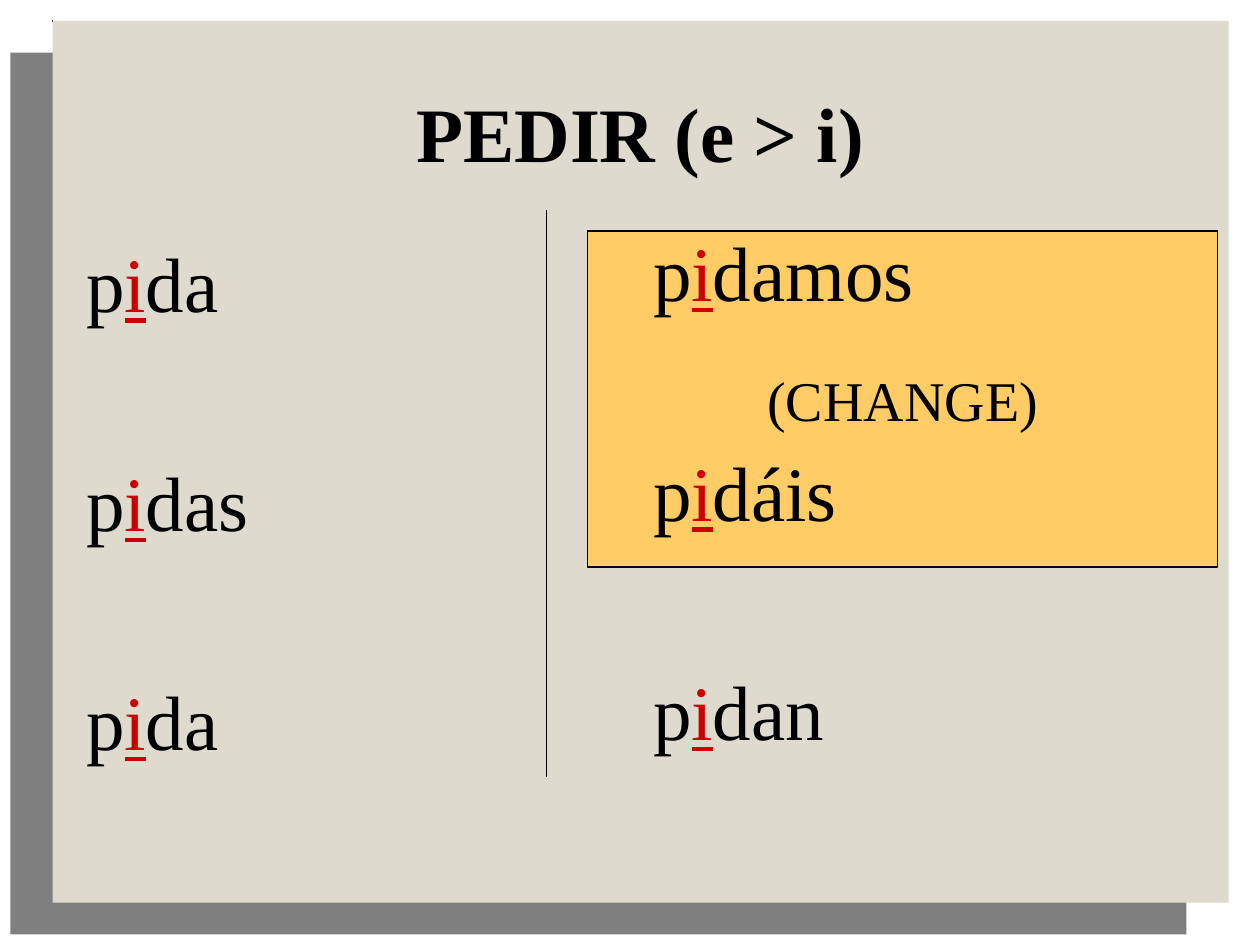
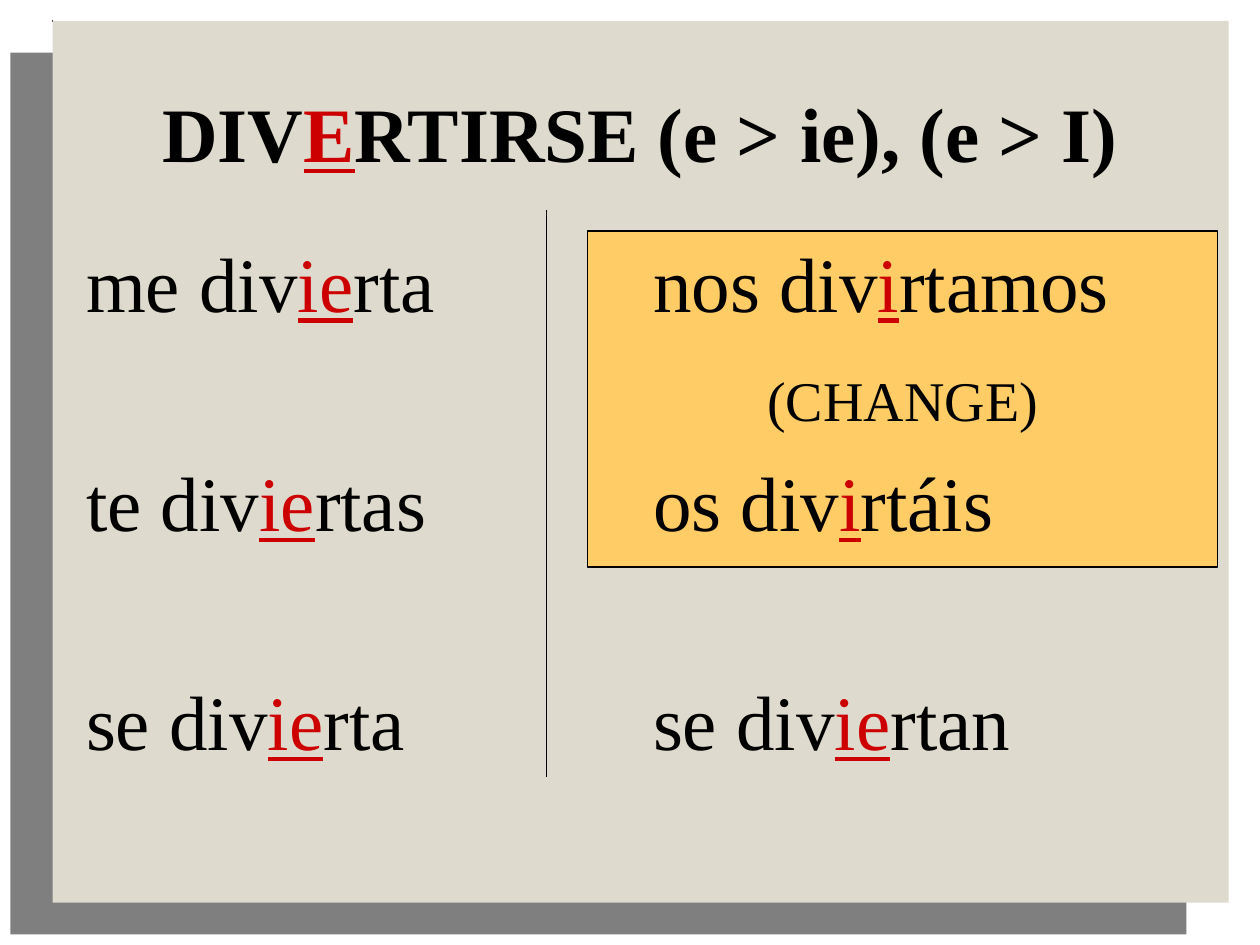
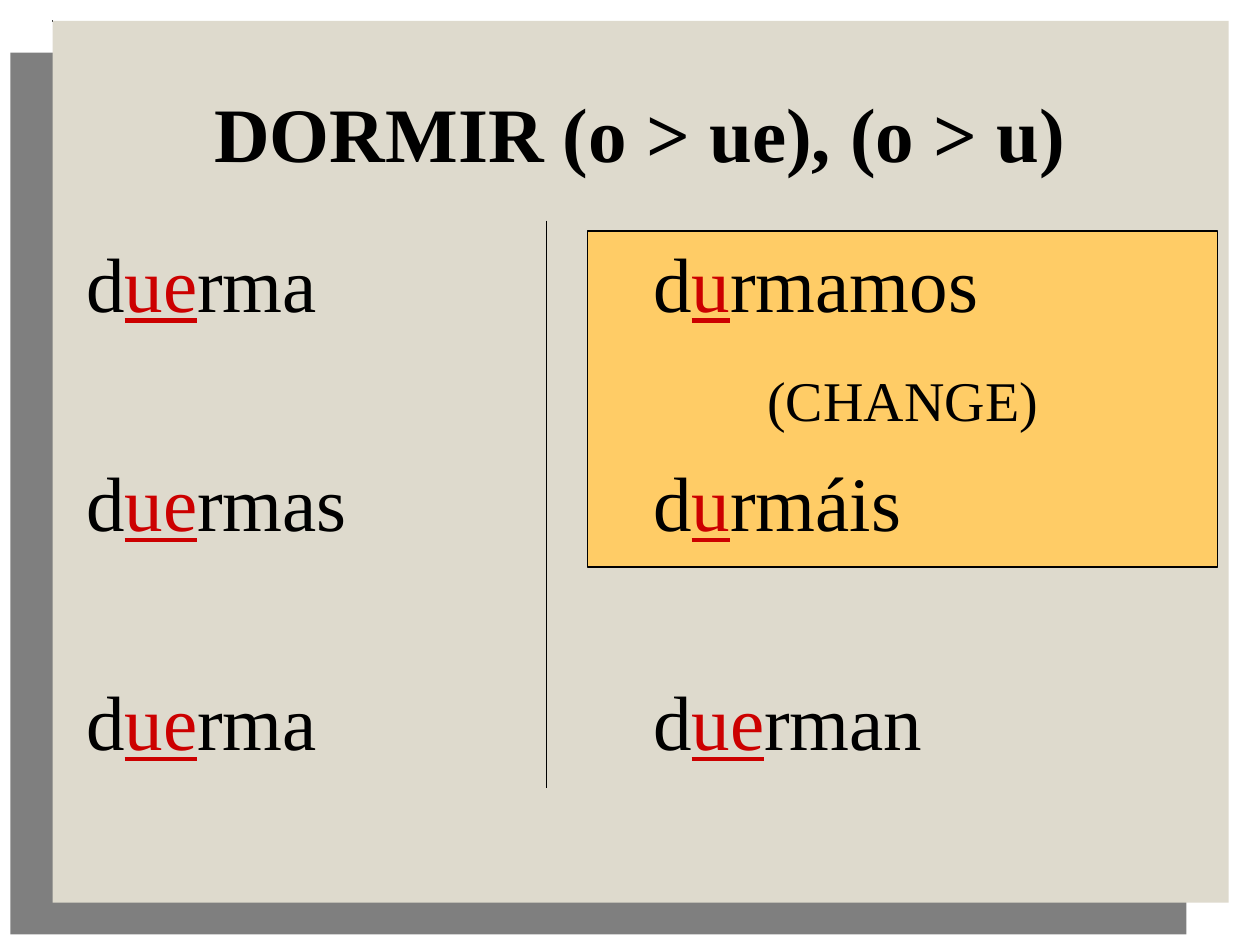
from lxml import etree
from pptx import Presentation
from pptx import util as u
from pptx.dml.color import RGBColor
from pptx.enum import shapes, text
from pptx.oxml.ns import qn

Cm, Pt = u.Cm, u.Pt

BLACK = RGBColor(0x00, 0x00, 0x00)
RED = RGBColor(0xCC, 0x00, 0x00)
SAND = RGBColor(0xDE, 0xDA, 0xCD)
GOLD = RGBColor(0xFF, 0xCC, 0x66)

FONT = "Times New Roman"
VERB_SIZE, NOTE_SIZE = Pt(44), Pt(32)
ROW_GAP = Pt(72.6)

PANEL_SIZE = (23.71, 17.78)
PANEL_CORNER = (1.06, 0.42)
SHADE_CORNER = (0.21, 1.06)

# Stressed letters stand between bars. Each verb: title, singular forms,
# plural forms, top of the plural list, top of the divider.
VERBS = [
    ("PEDIR (e > i)",
     ["p|i|da", "p|i|das", "p|i|da"],
     ["p|i|damos", "p|i|dáis", "p|i|dan"], 4.24, 4.24),
    ("DIV|E|RTIRSE (e > ie), (e > I)",
     ["me div|ie|rta", "te div|ie|rtas", "se div|ie|rta"],
     ["nos div|i|rtamos", "os div|i|rtáis", "se div|ie|rtan"], 4.45, 4.24),
    ("DORMIR (o > ue), (o > u)",
     ["d|ue|rma", "d|ue|rmas", "d|ue|rma"],
     ["d|u|rmamos", "d|u|rmáis", "d|ue|rman"], 4.45, 4.45),
]


class VerbDeck:
    def __init__(self):
        self.prs = Presentation()
        self.prs.slide_width, self.prs.slide_height = Cm(25.4), Cm(19.05)
        self.layout = self.prs.slide_layouts[3]
        self.slide = None

    def add_slide(self):
        self.slide = self.prs.slides.add_slide(self.layout)

    def rectangle(self, left, top, width, height, fill, line_width=None):
        rect = self.slide.shapes.add_shape(
            shapes.MSO_SHAPE.RECTANGLE, Cm(left), Cm(top), Cm(width), Cm(height))
        rect.shadow.inherit = False
        rect.fill.solid()
        rect.fill.fore_color.rgb = fill
        if line_width:
            rect.line.color.rgb = BLACK
            rect.line.width = Pt(line_width)
        else:
            rect.line.fill.background()
        return rect

    def backdrop(self):
        """Draw the shaded panel and hand it to the layout, behind its text."""
        for holder in list(self.layout.placeholders)[3:]:
            self.layout.shapes.element.remove(holder.element)
        shade = self.rectangle(*SHADE_CORNER, *PANEL_SIZE, BLACK)
        shade_color = next(shade.element.spPr.iter(qn("a:srgbClr")))
        etree.SubElement(shade_color, qn("a:alpha"), val="50000")
        panel = self.rectangle(*PANEL_CORNER, *PANEL_SIZE, SAND)
        corner_dot = self.rectangle(*PANEL_CORNER, 0, 0, GOLD, 1)
        for depth, part in enumerate((shade, panel, corner_dot), start=2):
            self.layout.shapes.element.insert(depth, part.element)

    def change_box(self):
        box = self.rectangle(11.85, 4.66, 12.7, 6.77, GOLD, 0.75)
        self.slide.shapes.element.insert(2, box.element)
        frame = box.text_frame
        frame.word_wrap = False
        frame.vertical_anchor = text.MSO_ANCHOR.MIDDLE
        frame.text = "(CHANGE)"
        frame.paragraphs[0].alignment = text.PP_ALIGN.CENTER
        self.style(frame.paragraphs[0].runs[0], NOTE_SIZE, BLACK)

    def style(self, run, size, color):
        run.font.name = FONT
        run.font.size = size
        run.font.color.rgb = color

    def stressed(self, paragraph, marked, bold=False):
        """Write text whose parts between bars are red and underlined."""
        for position, part in enumerate(marked.split("|")):
            is_stressed = position % 2 == 1
            run = paragraph.add_run()
            run.text = part
            self.style(run, VERB_SIZE, RED if is_stressed else BLACK)
            run.font.bold = bold
            run.font.underline = is_stressed

    def place(self, index, left, top, width, height):
        holder = self.slide.placeholders[index]
        holder.left, holder.top = Cm(left), Cm(top)
        holder.width, holder.height = Cm(width), Cm(height)
        holder.text_frame.auto_size = text.MSO_AUTO_SIZE.NONE
        return holder.text_frame

    def title(self, marked):
        frame = self.place(0, 1.48, 1.06, 22.86, 3.18)
        frame.vertical_anchor = text.MSO_ANCHOR.MIDDLE
        frame.paragraphs[0].alignment = text.PP_ALIGN.CENTER
        self.stressed(frame.paragraphs[0], marked, bold=True)

    def forms(self, index, verb_forms, left, top, width, height):
        frame = self.place(index, left, top, width, height)
        frame.margin_top = Cm(0.29)
        for row, form in enumerate(verb_forms):
            paragraph = frame.add_paragraph() if row else frame.paragraphs[0]
            properties = paragraph._p.get_or_add_pPr()
            properties.set("marL", "0")
            properties.set("indent", "0")
            etree.SubElement(properties, qn("a:buNone"))
            paragraph.space_before = ROW_GAP if row else Pt(0)
            self.stressed(paragraph, form)

    def divider(self, top):
        line = self.slide.shapes.add_connector(
            shapes.MSO_CONNECTOR.STRAIGHT,
            Cm(11.01), Cm(top), Cm(11.01), Cm(top + 11.43))
        line.line.color.rgb = BLACK
        line.line.width = Pt(0.75)
        etree.SubElement(line.element.spPr, qn("a:effectLst"))


def main():
    deck = VerbDeck()
    for number, (title, singular, plural, plural_top, divider_top) in enumerate(VERBS):
        deck.add_slide()
        if number == 0:
            deck.backdrop()
        deck.change_box()
        deck.title(title)
        deck.forms(1, singular, 1.48, 4.45, 11.2, 11.85)
        deck.forms(2, plural, 12.91, plural_top, 12.49, 11.43)
        deck.divider(divider_top)
    deck.prs.save("out.pptx")


if __name__ == "__main__":
    main()
